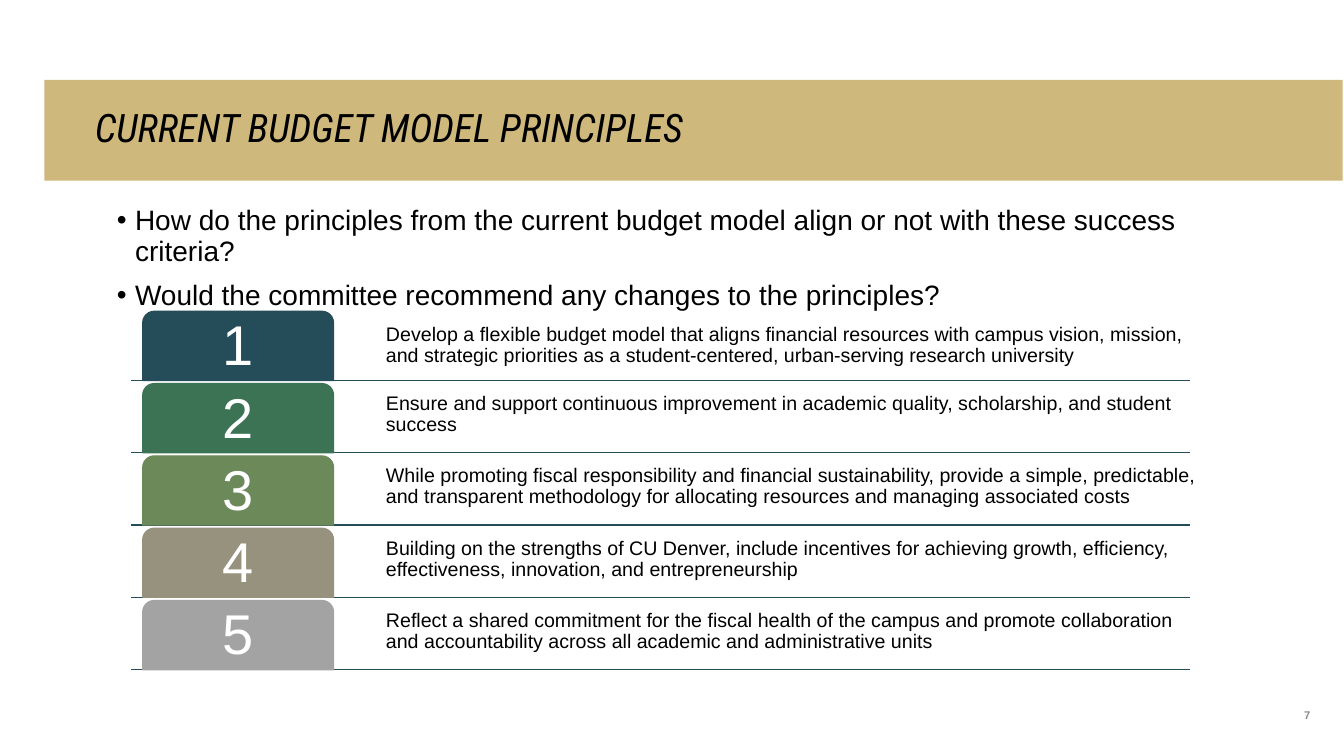
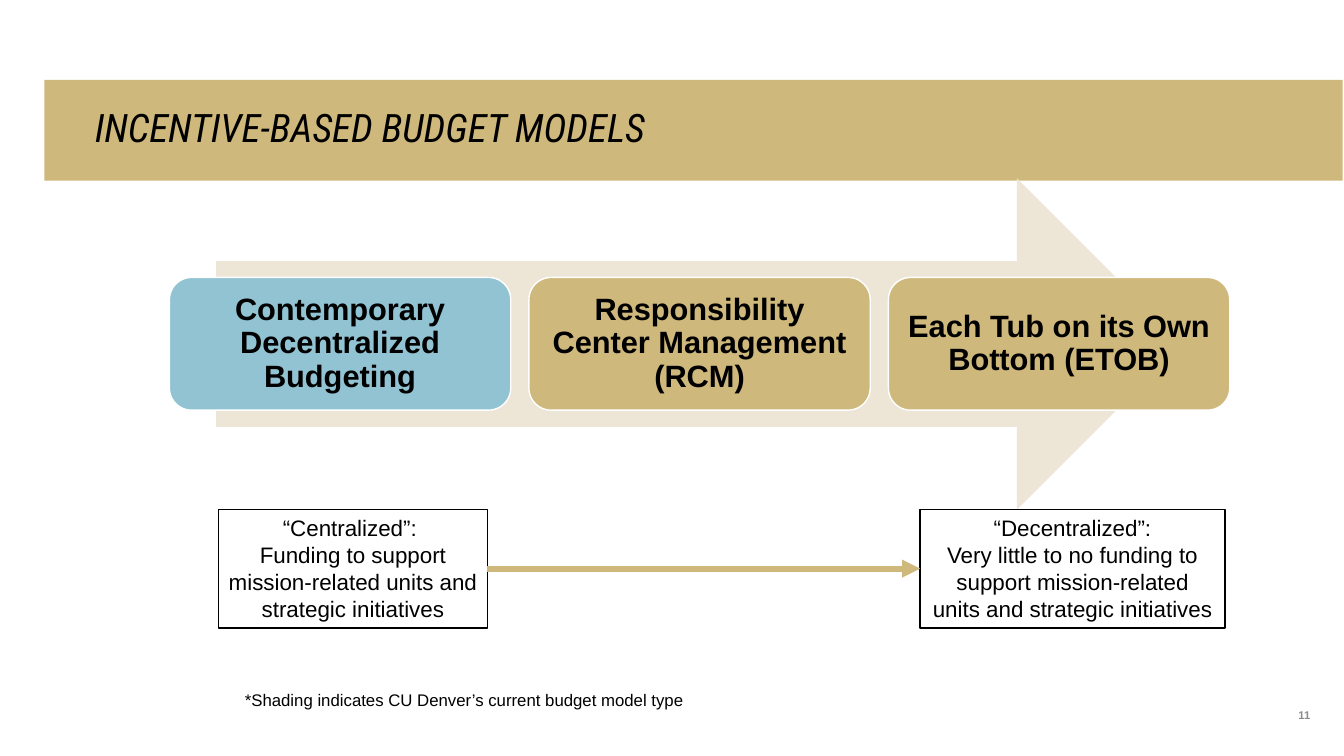
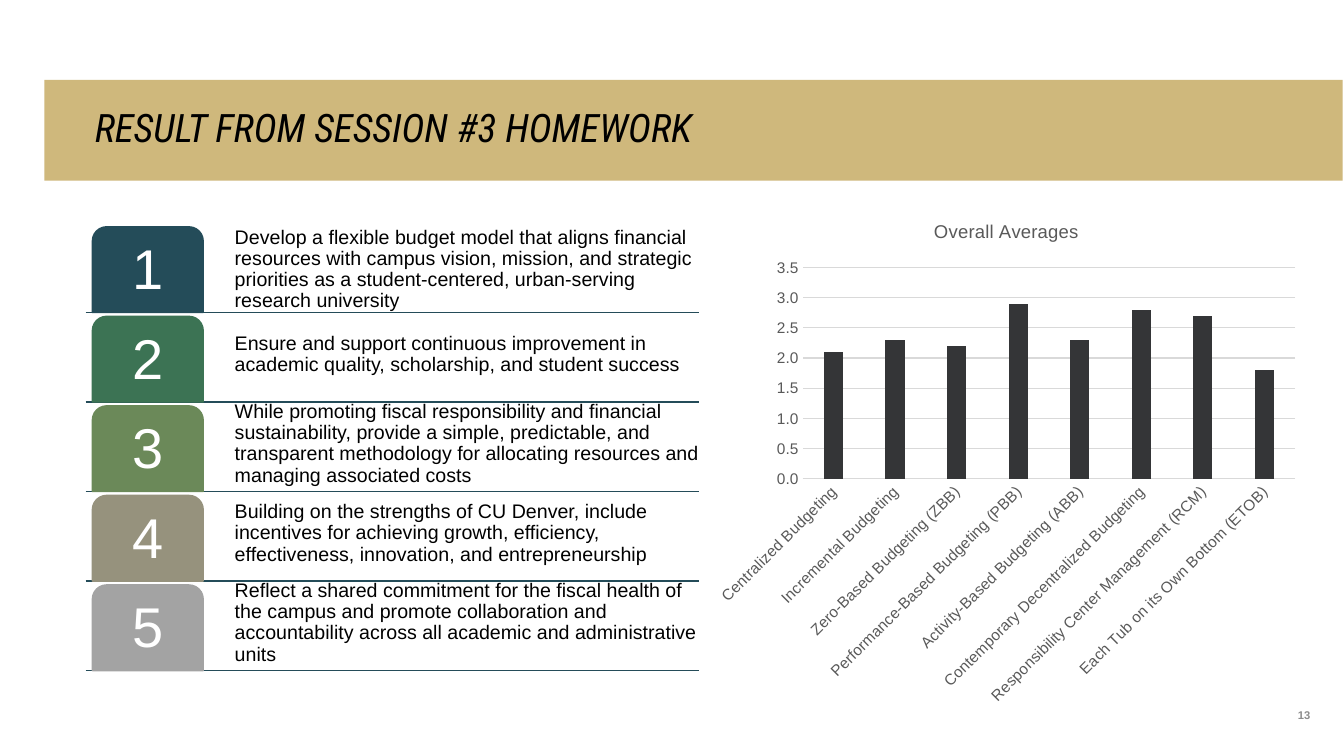
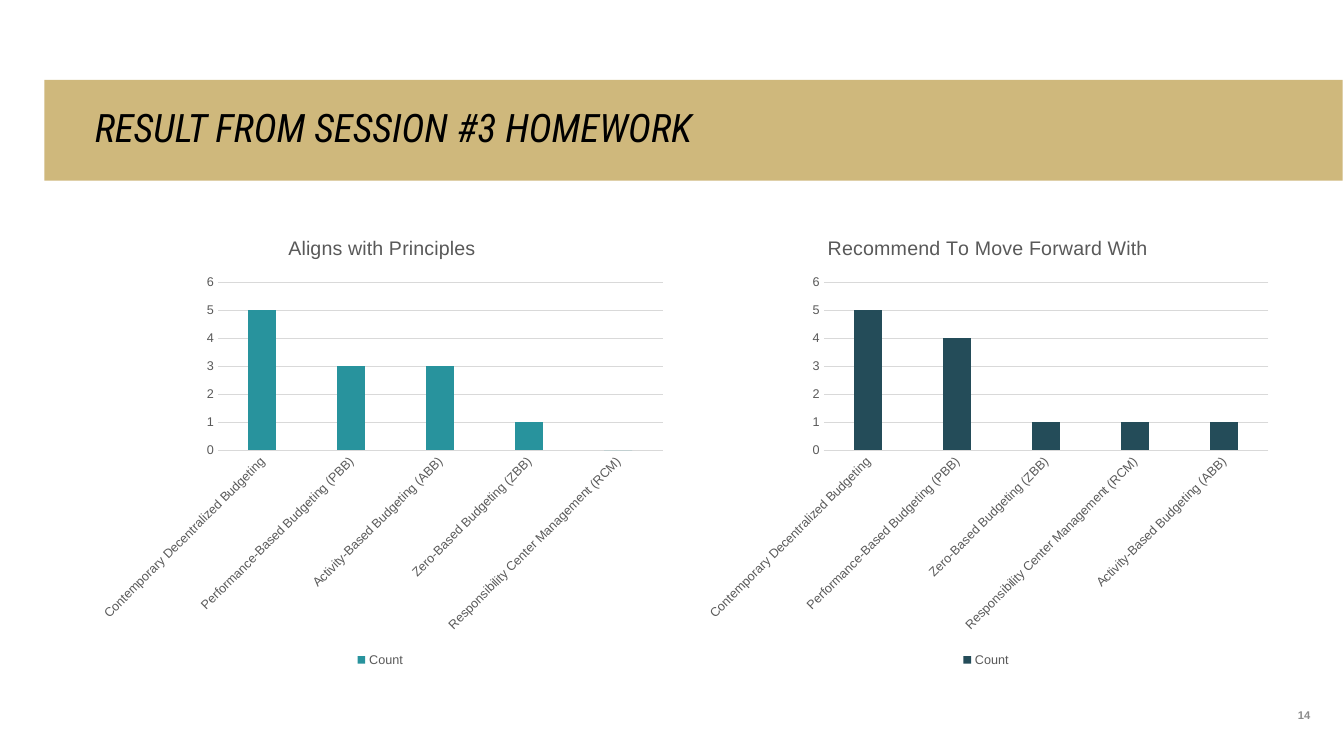
from dataclasses import dataclass

from lxml import etree
from pptx import Presentation
from pptx.chart.data import CategoryChartData
from pptx.dml.color import RGBColor
from pptx.enum import chart as charts, shapes, text
from pptx.oxml.ns import qn
from pptx.util import Pt

GOLD = RGBColor(0xCF, 0xB8, 0x7C)
SAND = RGBColor(0xED, 0xE6, 0xD7)
SKY = RGBColor(0x91, 0xC3, 0xD3)
NAVY = RGBColor(0x24, 0x4C, 0x59)
GREEN = RGBColor(0x3C, 0x73, 0x54)
MOSS = RGBColor(0x6B, 0x89, 0x59)
TAUPE = RGBColor(0x96, 0x92, 0x7D)
SILVER = RGBColor(0xA3, 0xA3, 0xA3)
TEAL = RGBColor(0x28, 0x93, 0x9D)
COAL = RGBColor(0x34, 0x35, 0x37)
GRAY = RGBColor(0x59, 0x59, 0x59)
PALE = RGBColor(0xD9, 0xD9, 0xD9)
MUTED = RGBColor(0x8C, 0x8C, 0x8C)
BLACK = RGBColor(0, 0, 0)
WHITE = RGBColor(0xFF, 0xFF, 0xFF)

SANS = "Arial"
HEAD = "Roboto Condensed"
LEFT, MID, RIGHT = text.PP_ALIGN.LEFT, text.PP_ALIGN.CENTER, text.PP_ALIGN.RIGHT
TOP, CENTER, LOW = (text.MSO_ANCHOR.TOP, text.MSO_ANCHOR.MIDDLE,
                    text.MSO_ANCHOR.BOTTOM)
KIND = shapes.MSO_SHAPE

CDB = "Contemporary Decentralized Budgeting"
RCM = "Responsibility Center Management (RCM)"
ETOB = "Each Tub on its Own Bottom (ETOB)"
PBB = "Performance-Based Budgeting (PBB)"
ABB = "Activity-Based Budgeting (ABB)"
ZBB = "Zero-Based Budgeting (ZBB)"


@dataclass(frozen=True)
class Box:
    x: float
    y: float
    w: float
    h: float

    def pts(self) -> list:
        return [Pt(n) for n in (self.x, self.y, self.w, self.h)]


@dataclass(frozen=True)
class Style:
    size: float
    color: RGBColor = BLACK
    bold: bool = False
    italic: bool = False
    face: str = SANS
    align: int = LEFT
    anchor: int = TOP
    space: float = 1.0
    inset: tuple = (7.2, 3.6, 7.2, 3.6)


@dataclass(frozen=True)
class Rule:
    color: RGBColor
    text: str


@dataclass(frozen=True)
class Grid:
    """Places of the first numbered row; step leads to the next row."""
    tab: Box
    step: float
    lift: float
    line: tuple
    text: tuple


@dataclass(frozen=True)
class Graph:
    box: Box
    title: str
    name: str
    color: RGBColor
    data: dict
    top: float
    unit: float
    form: str
    gap: int
    lap: int
    size: float
    head: float
    legend: bool


TITLE = Style(28, italic=True, face=HEAD, anchor=CENTER, space=0.9,
              inset=(36, 3.6, 72, 3.6))
PAGE = Style(8, MUTED, bold=True, align=RIGHT, anchor=LOW, inset=(0, 0, 0, 0))
BULLET = Style(20, space=0.9)
BODY = Style(14, anchor=CENTER, space=0.9, inset=(2.4, 2.4, 2.4, 2.4))
DIGIT = Style(40, WHITE, align=MID, anchor=CENTER, space=0.9, inset=(6, 6, 6, 6))
CARD = Style(22, bold=True, align=MID, anchor=CENTER, space=0.9,
             inset=(6.6, 6.6, 6.6, 6.6))
NOTE = Style(16, align=MID)
SMALL = Style(12)

RULES = [
    Rule(NAVY, "Develop a flexible budget model that aligns financial resources "
         "with campus vision, mission, and strategic priorities as a "
         "student-centered, urban-serving research university"),
    Rule(GREEN, "Ensure and support continuous improvement in academic quality, "
         "scholarship, and student success"),
    Rule(MOSS, "While promoting fiscal responsibility and financial "
         "sustainability, provide a simple, predictable, and transparent "
         "methodology for allocating resources and managing associated costs"),
    Rule(TAUPE, "Building on the strengths of CU Denver, include incentives for "
         "achieving growth, efficiency, effectiveness, innovation, and "
         "entrepreneurship"),
    Rule(SILVER, "Reflect a shared commitment for the fiscal health of the campus "
         "and promote collaboration and accountability across all academic "
         "and administrative units"),
]
WIDE = Grid(Box(102, 222.4, 136.2, 49.3), 51.65, 2.5, (93.6, 850), (273.3, 592.6))
SLIM = Grid(Box(66, 162, 79.2, 61.2), 63.95, 3.4, (61.2, 499), (165.3, 343.4))

MEANS = Graph(
    Box(504, 143.3, 429.8, 367.2), "Overall Averages", "Series 1", COAL,
    {"Centralized Budgeting": 2.1, "Incremental Budgeting": 2.3, ZBB: 2.2,
     PBB: 2.9, ABB: 2.3, CDB: 2.8, RCM: 2.7, ETOB: 1.8},
    3.5, 0.5, "0.0", 220, -30, 11, 13.2, False)


def tally(x: float, title: str, color: RGBColor, data: dict) -> Graph:
    return Graph(Box(x, 155.5, 417.6, 324), title, "Count ", color, data,
                 6, 1, "General", 219, -27, 9, 14, True)


COUNTS = [
    tally(496.8, "Recommend To Move Forward With", NAVY,
          {CDB: 5, PBB: 4, ZBB: 1, RCM: 1, ABB: 1}),
    tally(64.1, "Aligns with Principles", TEAL,
          {CDB: 5, PBB: 3, ABB: 3, ZBB: 1, RCM: 0}),
]


def paint(font, size: float, color: RGBColor, face: str = SANS,
          bold: bool = False, italic: bool = False) -> None:
    font.size, font.name, font.bold, font.italic = Pt(size), face, bold, italic
    font.color.rgb = color


def write(shape, words: str, style: Style) -> None:
    frame = shape.text_frame
    frame.text = words
    frame.word_wrap = True
    frame.auto_size = text.MSO_AUTO_SIZE.NONE
    frame.vertical_anchor = style.anchor
    (frame.margin_left, frame.margin_top,
     frame.margin_right, frame.margin_bottom) = [Pt(n) for n in style.inset]
    for para in frame.paragraphs:
        para.alignment, para.line_spacing = style.align, style.space
        for run in para.runs:
            paint(run.font, style.size, style.color, style.face,
                  style.bold, style.italic)


def label(slide, box: Box, words: str, style: Style):
    shape = slide.shapes.add_textbox(*box.pts())
    write(shape, words, style)
    return shape


def block(slide, kind, box: Box, fill: RGBColor, edge: RGBColor | None = None):
    shape = slide.shapes.add_shape(kind, *box.pts())
    shape.shadow.inherit = False
    shape.fill.solid()
    shape.fill.fore_color.rgb = fill
    if edge is None:
        shape.line.fill.background()
    else:
        shape.line.color.rgb = edge
        shape.line.width = Pt(1)
    return shape


def link(slide, x: float, y: float, end: float, color: RGBColor, width: float):
    """Draw a level line from x to end."""
    line = slide.shapes.add_connector(
        shapes.MSO_CONNECTOR.STRAIGHT, Pt(x), Pt(y), Pt(end), Pt(y))
    line.line.color.rgb = color
    line.line.width = Pt(width)
    etree.SubElement(line._element.spPr, qn("a:effectLst"))
    return line


def start(deck, title: str, page: int):
    slide = deck.slides.add_slide(deck.slide_layouts[5])
    band = slide.shapes.title
    band.left, band.top, band.width, band.height = Box(31.7, 57, 927.4, 72).pts()
    band.fill.solid()
    band.fill.fore_color.rgb = GOLD
    write(band, title, TITLE)
    label(slide, Box(874.8, 479.5, 61.2, 36), str(page), PAGE)
    return slide


def bullets(slide, box: Box, lines: list[str]) -> None:
    shape = label(slide, box, "\n".join(lines), BULLET)
    for row, para in enumerate(shape.text_frame.paragraphs):
        if row:
            para.space_before = Pt(10)
        props = para._p.get_or_add_pPr()
        props.set("marL", str(Pt(23.2)))
        props.set("indent", str(-Pt(13)))
        etree.SubElement(props, qn("a:buFont")).set("typeface", SANS)
        etree.SubElement(props, qn("a:buChar")).set("char", "•")


def ladder(slide, grid: Grid) -> None:
    """Draw the numbered principles, lines behind."""
    tab = grid.tab
    tops = [tab.y + row * grid.step for row in range(len(RULES))]
    for y in tops:
        link(slide, grid.line[0], y + tab.h, grid.line[1], NAVY, 1)
    for row, (rule, y) in enumerate(zip(RULES, tops)):
        lift = grid.lift if row else 0
        label(slide, Box(grid.text[0], y - lift, grid.text[1], tab.h),
              rule.text, BODY)
        shape = block(slide, KIND.ROUND_2_SAME_RECTANGLE,
                      Box(tab.x, y, tab.w, tab.h), rule.color, rule.color)
        write(shape, str(row + 1), DIGIT)


def columns(slide, graph: Graph) -> None:
    data = CategoryChartData()
    data.categories = list(graph.data)
    data.add_series(graph.name, list(graph.data.values()))
    chart = slide.shapes.add_chart(
        charts.XL_CHART_TYPE.COLUMN_CLUSTERED, *graph.box.pts(), data).chart
    paint(chart.font, graph.size, GRAY)

    chart.has_title = True
    frame = chart.chart_title.text_frame
    frame.text = graph.title
    paint(frame.paragraphs[0].runs[0].font, graph.head, GRAY)
    chart.has_legend = graph.legend
    if graph.legend:
        chart.legend.position = charts.XL_LEGEND_POSITION.BOTTOM
        chart.legend.include_in_layout = False
        paint(chart.legend.font, graph.size, GRAY)

    plot = chart.plots[0]
    plot.gap_width, plot.overlap = graph.gap, graph.lap
    plot.vary_by_categories = False
    fill = plot.series[0].format.fill
    fill.solid()
    fill.fore_color.rgb = graph.color

    cat, val = chart.category_axis, chart.value_axis
    for axis in (cat, val):
        axis.major_tick_mark = charts.XL_TICK_MARK.NONE
        axis.minor_tick_mark = charts.XL_TICK_MARK.NONE
        paint(axis.tick_labels.font, graph.size, GRAY)
        # This angle lets the program turn labels that do not fit.
        body = axis._element.find(".//" + qn("a:bodyPr"))
        body.set("rot", "-60000000")
        body.set("vert", "horz")
    val.minimum_scale, val.maximum_scale = 0, graph.top
    val.major_unit = graph.unit
    val.tick_labels.number_format = graph.form
    val.tick_labels.number_format_is_linked = False
    val.format.line.fill.background()
    for line in (cat.format.line, val.major_gridlines.format.line):
        line.color.rgb = PALE
        line.width = Pt(0.75)


def models(slide) -> None:
    label(slide, Box(167.8, 488.9, 720, 21.6),
          "*Shading indicates CU Denver’s current budget model type", SMALL)
    block(slide, KIND.RIGHT_ARROW, Box(154.3, 127.3, 690.5, 236.9), SAND)
    for col, (name, fill) in enumerate([(CDB, SKY), (RCM, GOLD), (ETOB, GOLD)]):
        card = block(slide, KIND.ROUNDED_RECTANGLE,
                     Box(121 + col * 256.8, 198.2, 243.8, 94.8), fill, WHITE)
        write(card, name, CARD)

    ends = []
    for x, w, words in [
        (156.1, 192, "“Centralized”: \nFunding to support mission-related units "
         "and strategic initiatives"),
        (657.2, 217.8, "“Decentralized”:\vVery little to no funding to support "
         "mission-related units and strategic initiatives"),
    ]:
        note = block(slide, KIND.RECTANGLE, Box(x, 363.8, w, 84.8), WHITE, BLACK)
        write(note, words, NOTE)
        ends.append(note)
    arrow = link(slide, 348.1, 406.2, 657.2, GOLD, 4.25)
    arrow.begin_connect(ends[0], 3)
    arrow.end_connect(ends[1], 1)
    tail = etree.SubElement(arrow.line._get_or_add_ln(), qn("a:tailEnd"))
    tail.set("type", "triangle")


def main() -> None:
    deck = Presentation()
    deck.slide_width, deck.slide_height = Pt(960), Pt(540)

    slide = start(deck, "CURRENT BUDGET MODEL PRINCIPLES", 7)
    bullets(slide, Box(66.2, 144, 851.8, 270), [
        "How do the principles from the current budget model align or not with "
        "these success criteria?",
        "Would the committee recommend any changes to the principles?"])
    ladder(slide, WIDE)

    models(start(deck, "INCENTIVE-BASED BUDGET MODELS", 11))

    result = "RESULT FROM SESSION #3 HOMEWORK"
    slide = start(deck, result, 13)
    ladder(slide, SLIM)
    columns(slide, MEANS)

    slide = start(deck, result, 14)
    for graph in COUNTS:
        columns(slide, graph)

    deck.save("out.pptx")


if __name__ == "__main__":
    main()
